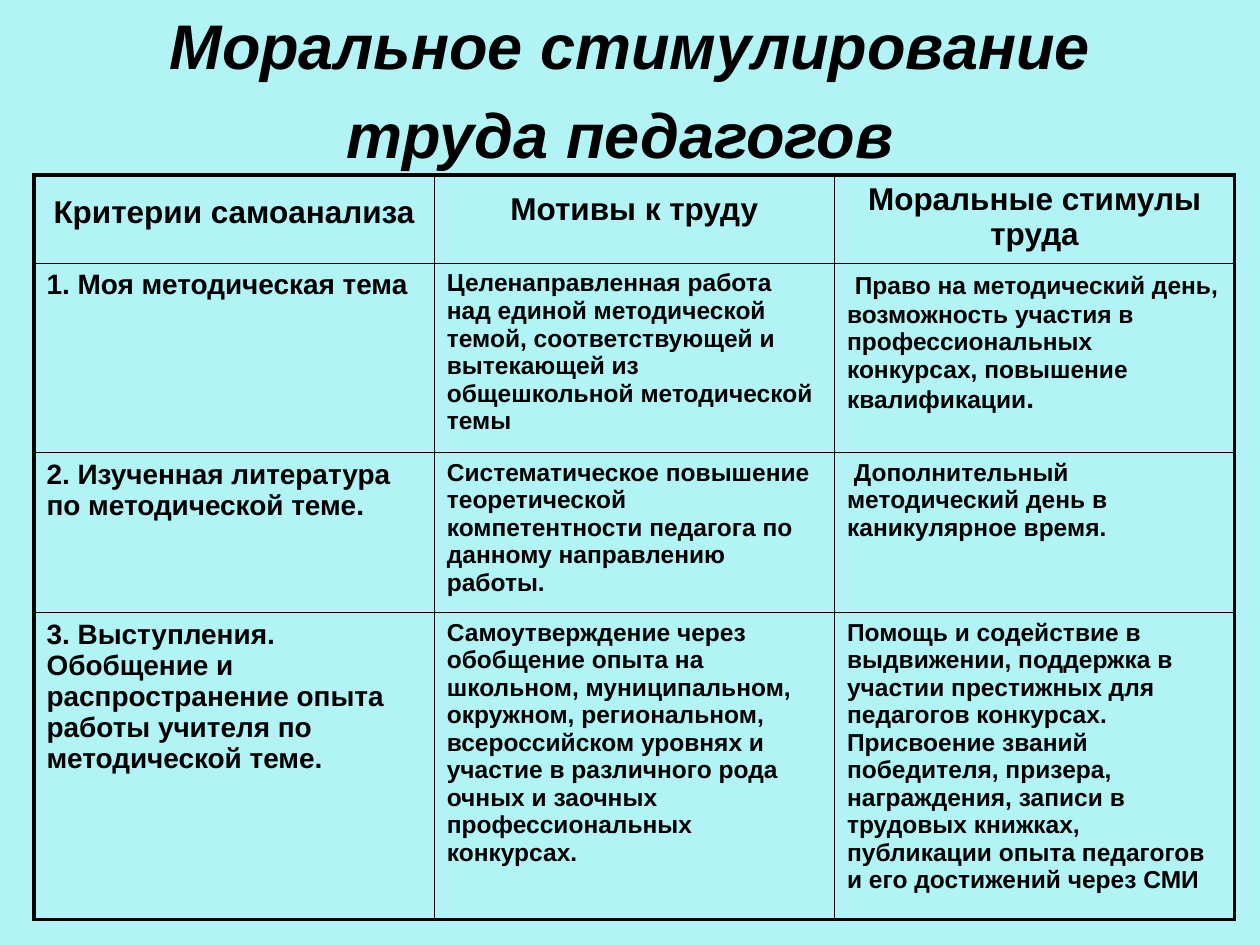
from dataclasses import dataclass

from lxml import etree
from pptx import Presentation
from pptx import util as u
from pptx.dml.color import RGBColor
from pptx.enum import text
from pptx.oxml.ns import qn


@dataclass(frozen=True)
class Theme:
    font: str = "Arial"
    ink: str = "000000"
    background: str = "B2F4F5"
    title: int = 36
    title_space: int = 40
    header: int = 18
    criterion: int = 16
    body: int = 14
    inner_line: float = 1
    outer_line: float = 2.25


THEME = Theme()

TITLE = [("Моральное стимулирование труда педагогов", THEME.title), (" ", THEME.title_space)]

# Header text and its top margin in inches
HEADERS = [
    ("Критерии самоанализа", 0.16),
    ("Мотивы к труду", 0.13),
    ("Моральные стимулы труда", 0.05),
]

# Criterion, motive, incentive; a list holds runs with their own sizes
ROWS = [
    (
        "1. Моя методическая тема",
        "Целенаправленная работа над единой методической темой, соответствующей и "
        "вытекающей из общешкольной методической темы",
        [
            (" ", THEME.criterion),
            ("Право на методический день, возможность участия в профессиональных "
             "конкурсах, повышение квалификации", THEME.body),
            (".", THEME.criterion),
        ],
    ),
    (
        "2. Изученная литература по методической теме.",
        "Систематическое повышение теоретической компетентности педагога по данному "
        "направлению работы.",
        " Дополнительный методический день в каникулярное время.",
    ),
    (
        "3. Выступления. Обобщение и распространение опыта работы учителя по "
        "методической теме.",
        "Самоутверждение через обобщение опыта на школьном, муниципальном, окружном, "
        "региональном, всероссийском уровнях и участие в различного рода очных и "
        "заочных профессиональных конкурсах.",
        "Помощь и содействие в выдвижении, поддержка в участии престижных для "
        "педагогов конкурсах. Присвоение званий победителя, призера, награждения, "
        "записи в трудовых книжках, публикации опыта педагогов и его достижений через СМИ",
    ),
]

TITLE_BOX = (0.5, 0.3, 9, 0.77)
TABLE_BOX = (0.27, 1.39, 9.53, 5.9)
ROW_HEIGHTS = [0.7, 1.5, 1.27, 2.43]
COLUMN_SIZES = [THEME.criterion, THEME.body, THEME.body]


def write_text(frame, content, *, size=None, italic=False, align=text.PP_ALIGN.LEFT, spacing=None):
    """Write a string, or a list of (string, size) runs, as one bold paragraph."""
    frame.word_wrap = True
    paragraph = frame.paragraphs[0]
    paragraph.alignment = align
    paragraph.line_spacing = spacing
    runs = [(content, size)] if isinstance(content, str) else content
    for words, points in runs:
        run = paragraph.add_run()
        run.text = words
        run.font.name = THEME.font
        run.font.size = u.Pt(points)
        run.font.bold = True
        run.font.italic = italic
        run.font.color.rgb = RGBColor.from_string(THEME.ink)


def set_borders(cell, outer_sides):
    """Draw all four borders, thick on the sides listed in outer_sides."""
    properties = cell._tc.get_or_add_tcPr()
    for position, side in enumerate("LRTB"):
        points = THEME.outer_line if side in outer_sides else THEME.inner_line
        line = etree.Element(qn(f"a:ln{side}"), w=str(u.Pt(points)))
        fill = etree.SubElement(line, qn("a:solidFill"))
        etree.SubElement(fill, qn("a:srgbClr"), val=THEME.ink)
        properties.insert(position, line)


def add_title(slide):
    box = slide.shapes.add_textbox(*map(u.Inches, TITLE_BOX))
    box.text_frame.vertical_anchor = text.MSO_ANCHOR.MIDDLE
    write_text(box.text_frame, TITLE, italic=True, align=text.PP_ALIGN.CENTER, spacing=1.08)


def add_criteria_table(slide):
    row_count, column_count = len(ROW_HEIGHTS), len(HEADERS)
    table = slide.shapes.add_table(row_count, column_count, *map(u.Inches, TABLE_BOX)).table
    table.first_row = table.horz_banding = False
    for column in table.columns:
        column.width = u.Inches(TABLE_BOX[2] / column_count)
    for row, height in zip(table.rows, ROW_HEIGHTS):
        row.height = u.Inches(height)

    for index, (words, top_margin) in enumerate(HEADERS):
        cell = table.cell(0, index)
        cell.margin_top = u.Inches(top_margin)
        write_text(cell.text_frame, words, size=THEME.header, align=text.PP_ALIGN.CENTER)
    for row_index, contents in enumerate(ROWS, start=1):
        for column_index, (content, size) in enumerate(zip(contents, COLUMN_SIZES)):
            write_text(table.cell(row_index, column_index).text_frame, content, size=size)

    for row_index in range(row_count):
        for column_index in range(column_count):
            edges = {
                "L": column_index == 0,
                "R": column_index == column_count - 1,
                "T": row_index == 0,
                "B": row_index == row_count - 1,
            }
            cell = table.cell(row_index, column_index)
            cell.fill.background()
            set_borders(cell, [side for side, is_outer in edges.items() if is_outer])


def main():
    presentation = Presentation()
    presentation.slide_width, presentation.slide_height = u.Inches(10), u.Inches(7.5)
    slide = presentation.slides.add_slide(presentation.slide_layouts[6])
    slide.background.fill.solid()
    slide.background.fill.fore_color.rgb = RGBColor.from_string(THEME.background)
    add_title(slide)
    add_criteria_table(slide)
    presentation.save("out.pptx")


if __name__ == "__main__":
    main()
